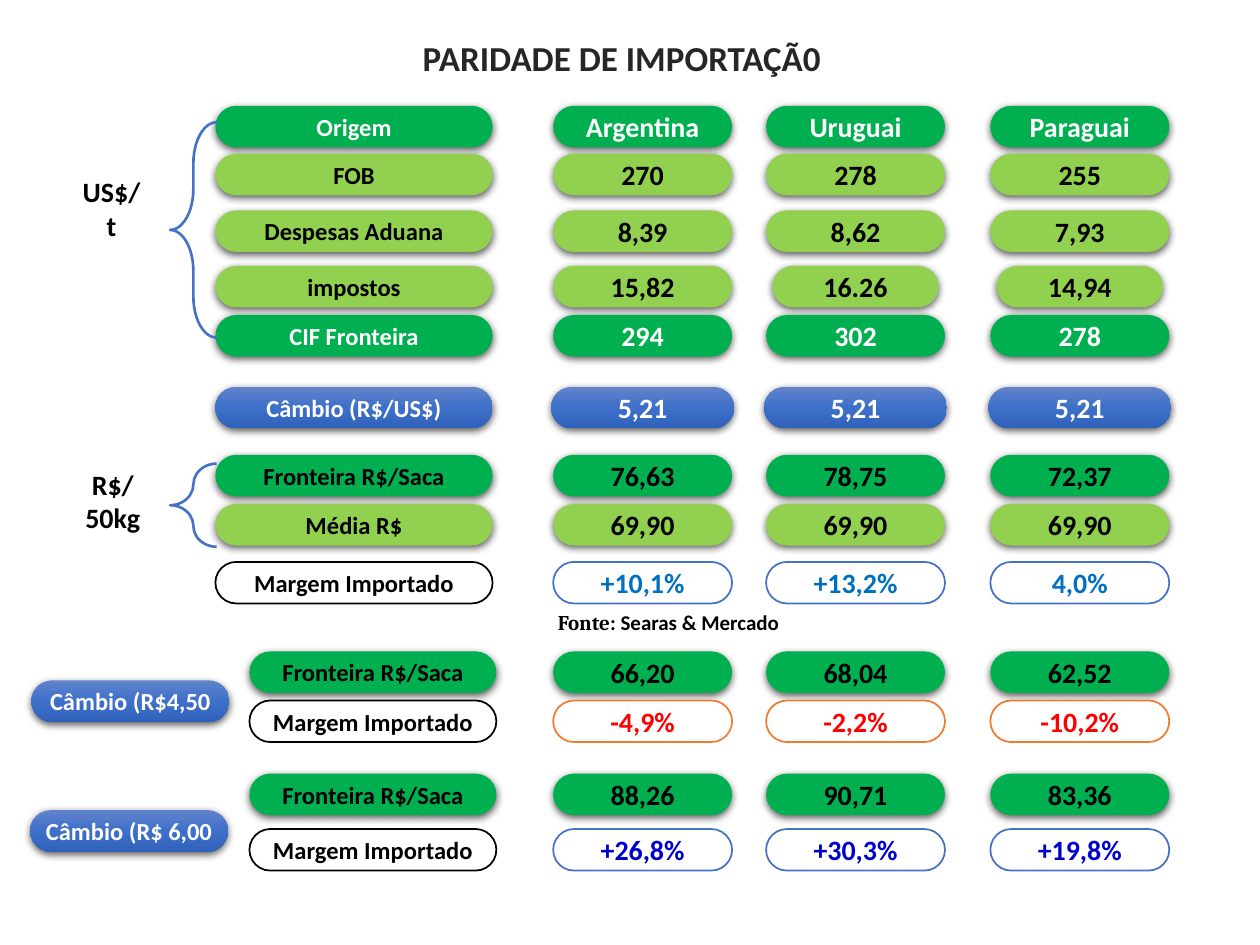
from copy import deepcopy
from typing import NamedTuple, Optional

from lxml.etree import SubElement
from pptx import Presentation
from pptx.dml.color import RGBColor
from pptx.enum.shapes import MSO_SHAPE
from pptx.enum.text import MSO_ANCHOR, PP_ALIGN
from pptx.oxml.ns import qn
from pptx.util import Inches, Pt

DARK, LIGHT, BLUE, ORANGE = "00B050", "92D050", "4472C4", "ED7D31"
WHITE, BLACK = "FFFFFF", "000000"
GRADIENT = ("6183CB", "3E70CA", "3062BB")
PILL_H = 0.33
COLUMN_CENTERS = (5.1, 6.79, 8.57)
MAIN_LABEL, SCENARIO_LABEL = (1.71, 2.2), (1.98, 1.96)


class Style(NamedTuple):
    fill: Optional[str]
    color: str
    line: Optional[str] = None


HEADER = Style(DARK, WHITE)
COST = Style(LIGHT, BLACK)
BORDER_PRICE = Style(DARK, BLACK)
RATE = Style(None, WHITE)
MARGIN_LABEL = Style(WHITE, BLACK, BLACK)
MARGIN = Style(WHITE, "0070C0", BLUE)
LOSS = Style(WHITE, "FF0000", ORANGE)
GAIN = Style(WHITE, "0000CC", BLUE)


class Row(NamedTuple):
    top: float
    label: str
    values: tuple[str, str, str]
    style: Style
    label_style: Style
    label_box: tuple[float, float] = MAIN_LABEL
    widths: tuple[float, float, float] = (1.42, 1.42, 1.42)


ROWS = [
    Row(0.84, "Origem", ("Argentina", "Uruguai", "Paraguai"), HEADER, HEADER),
    Row(1.22, "FOB", ("270", "278", "255"), COST, COST),
    Row(1.67, "Despesas Aduana", ("8,39", "8,62", "7,93"), COST, COST),
    Row(2.11, "impostos", ("15,82", "16.26", "14,94"), COST, COST,
        widths=(1.42, 1.32, 1.32)),
    Row(2.5, "CIF Fronteira", ("294", "302", "278"), HEADER, HEADER),
    Row(3.07, "Câmbio (R$/US$)", ("5,21", "5,21", "5,21"), RATE, RATE,
        widths=(1.45, 1.45, 1.45)),
    Row(3.61, "Fronteira R$/Saca", ("76,63", "78,75", "72,37"), BORDER_PRICE, BORDER_PRICE),
    Row(4.0, "Média R$", ("69,90", "69,90", "69,90"), COST, COST),
    Row(4.46, "Margem Importado", ("+10,1%", "+13,2%", "4,0%"), MARGIN, MARGIN_LABEL),
    Row(5.17, "Fronteira R$/Saca", ("66,20", "68,04", "62,52"), BORDER_PRICE, BORDER_PRICE,
        SCENARIO_LABEL),
    Row(5.56, "Margem Importado", ("-4,9%", "-2,2%", "-10,2%"), LOSS, MARGIN_LABEL,
        SCENARIO_LABEL),
    Row(6.14, "Fronteira R$/Saca", ("88,26", "90,71", "83,36"), BORDER_PRICE, BORDER_PRICE,
        SCENARIO_LABEL),
    Row(6.58, "Margem Importado", ("+26,8%", "+30,3%", "+19,8%"), GAIN, MARGIN_LABEL,
        SCENARIO_LABEL),
]


def rgb(value: str) -> RGBColor:
    return RGBColor.from_string(value)


def format_run(r, size: float, color: str, font: str = "Calibri") -> None:
    r.font.name = font
    r.font.size = Pt(size)
    r.font.bold = True
    r.font.color.rgb = rgb(color)


def set_text(s, text: str, size: float, color: str, wrap: bool = False) -> None:
    tf = s.text_frame
    tf.text = text
    tf.word_wrap = wrap
    tf.vertical_anchor = MSO_ANCHOR.MIDDLE
    p = tf.paragraphs[0]
    p.alignment = PP_ALIGN.CENTER
    format_run(p.runs[0], size, color)


def fill_gradient(s) -> None:
    s.fill.gradient()
    s.fill.gradient_angle = 270
    stops = s._element.spPr.find(f".//{qn('a:gsLst')}")
    stops.insert(1, deepcopy(stops[0]))
    for i, stop in enumerate(s.fill.gradient_stops):
        stop.color.rgb = rgb(GRADIENT[i])
        stop.position = i / 2


def add_shadow(s) -> None:
    effects = s._element.spPr.find(qn("a:effectLst"))
    shadow = SubElement(effects, qn("a:outerShdw"), blurRad=str(Pt(4.5)), dist=str(Pt(1.5)),
                        dir="5400000", rotWithShape="0")
    color = SubElement(shadow, qn("a:srgbClr"), val=BLACK)
    SubElement(color, qn("a:alpha"), val="63000")


def add_pill(slide, left: float, top: float, width: float, text: str, size: float,
             style: Style) -> None:
    s = slide.shapes.add_shape(MSO_SHAPE.ROUNDED_RECTANGLE, Inches(left), Inches(top),
                               Inches(width), Inches(PILL_H))
    s.adjustments[0] = 0.5
    s.shadow.inherit = False
    if style.fill:
        s.fill.solid()
        s.fill.fore_color.rgb = rgb(style.fill)
    else:
        fill_gradient(s)
    if style.line:
        s.line.color.rgb = rgb(style.line)
        s.line.width = Pt(1)
    else:
        s.line.fill.background()
        add_shadow(s)
    set_text(s, text, size, style.color)


def add_row(slide, row: Row) -> None:
    left, width = row.label_box
    add_pill(slide, left, row.top, width, row.label, 14, row.label_style)
    for center, value_width, value in zip(COLUMN_CENTERS, row.widths, row.values):
        add_pill(slide, center - value_width / 2, row.top, value_width, value, 16, row.style)


def add_brace(slide, top: float, height: float, curve: float) -> None:
    s = slide.shapes.add_shape(MSO_SHAPE.LEFT_BRACE, Inches(1.35), Inches(top),
                               Inches(0.37), Inches(height))
    s.adjustments[0] = curve
    s.adjustments[1] = 0.5
    s.shadow.inherit = False
    s.fill.background()
    s.line.color.rgb = rgb(BLUE)
    s.line.width = Pt(1.5)


def add_box(slide, left: float, top: float, width: float, height: float):
    return slide.shapes.add_textbox(Inches(left), Inches(top), Inches(width), Inches(height))


def add_title(slide) -> None:
    s = add_box(slide, 1.02, 0.24, 7.33, 0.44)
    set_text(s, "PARIDADE DE IMPORTAÇÃ0", 20, "262626", wrap=True)
    pPr = s.text_frame.paragraphs[0]._p.get_or_add_pPr()
    pPr.set("marL", str(Inches(0.5)))
    pPr.set("lvl", "1")


def add_source(slide) -> None:
    tf = add_box(slide, 4.33, 4.79, 3.94, 0.3).text_frame
    tf.word_wrap = True
    tf.vertical_anchor = MSO_ANCHOR.MIDDLE
    for text, font in (("Fonte", "Cambria"), (": Searas & Mercado", "Calibri")):
        r = tf.paragraphs[0].add_run()
        r.text = text
        format_run(r, 12, BLACK, font)


def main() -> None:
    prs = Presentation()
    prs.slide_width, prs.slide_height = Inches(10), Inches(7.5)
    slide = prs.slides.add_slide(prs.slide_layouts[6])
    add_title(slide)
    add_source(slide)
    for row in ROWS:
        add_row(slide, row)
    for top, height, curve in ((0.97, 1.71, 0.88), (3.68, 0.66, 2.32)):
        add_brace(slide, top, height, curve)
    for left, top, unit in ((0.53, 1.49, "US$/t"), (0.54, 3.81, "R$/50kg")):
        set_text(add_box(slide, left, top, 0.71, PILL_H), unit, 16, BLACK)
    for left, top, rate in ((0.25, 5.4, "Câmbio (R$4,50"), (0.24, 6.43, "Câmbio (R$ 6,00")):
        add_pill(slide, left, top, 1.57, rate, 14, RATE)
    prs.save("out.pptx")


if __name__ == "__main__":
    main()
